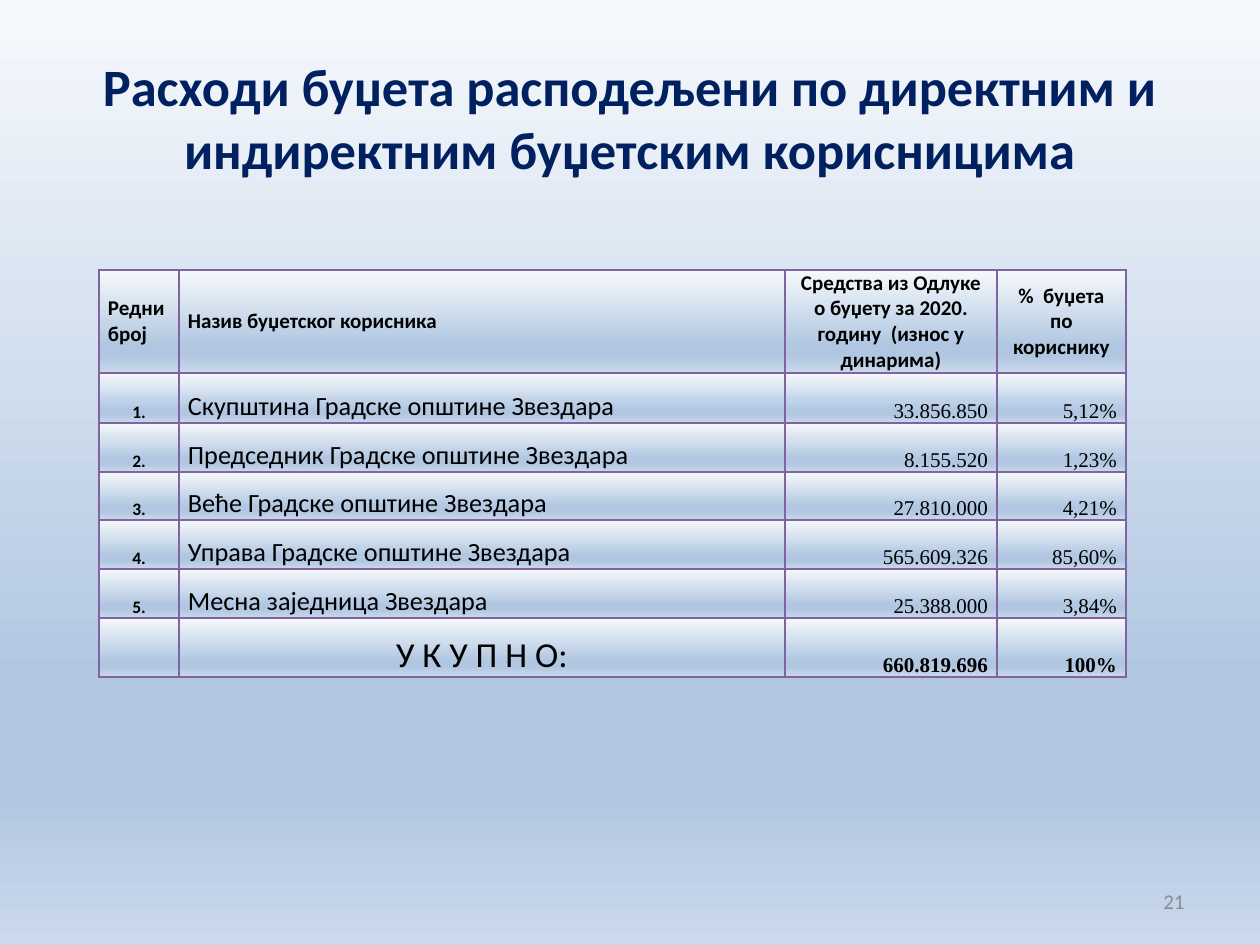
from dataclasses import dataclass

from lxml import etree
from pptx import Presentation
from pptx import util as u
from pptx.dml.color import RGBColor
from pptx.enum import text
from pptx.oxml import ns

PX = 914400 / 126  # EMU in one px

NAVY = RGBColor(0x00, 0x20, 0x60)
BLACK = RGBColor(0x00, 0x00, 0x00)
GRAY = RGBColor(0x8C, 0x8C, 0x8C)
PURPLE = RGBColor(0x80, 0x64, 0xA2)
STOPS = [
    (0, RGBColor(0xF6, 0xF9, 0xFC)),
    (74, RGBColor(0xB0, 0xC6, 0xE1)),
    (83, RGBColor(0xB0, 0xC6, 0xE1)),
    (100, RGBColor(0xCA, 0xD9, 0xEB)),
]

LEFT, CENTER, RIGHT = text.PP_ALIGN.LEFT, text.PP_ALIGN.CENTER, text.PP_ALIGN.RIGHT
MIDDLE, BOTTOM = text.MSO_ANCHOR.MIDDLE, text.MSO_ANCHOR.BOTTOM


@dataclass(frozen=True)
class Style:
    size: int
    color: RGBColor = BLACK
    bold: bool = False
    align: text.PP_ALIGN = LEFT
    anchor: text.MSO_ANCHOR = BOTTOM
    font: str = "Calibri"


TITLE = Style(30, NAVY, True, CENTER, MIDDLE)
PAGE = Style(12, GRAY, False, RIGHT, MIDDLE)
HEAD = Style(12, bold=True, anchor=MIDDLE)
HEAD_MID = Style(12, bold=True, align=CENTER, anchor=MIDDLE)
NUMBER = Style(10, bold=True, align=CENTER)
NAME = Style(15)
VALUE = Style(12, align=RIGHT, font="Times New Roman")
TOTAL = Style(20, align=CENTER)
TOTAL_VALUE = Style(12, bold=True, align=RIGHT, font="Times New Roman")

HEAD_STYLES = (HEAD, HEAD, HEAD_MID, HEAD_MID)
BODY_STYLES = (NUMBER, NAME, VALUE, VALUE)
TOTAL_STYLES = (NUMBER, TOTAL, TOTAL_VALUE, TOTAL_VALUE)

COLUMNS = (80, 606, 212, 129)
ROWS = (
    (103, HEAD_STYLES, ("Редни\vброј", "Назив буџетског корисника",
                        "Средства из Одлуке о буџету за 2020. годину  (износ у динарима)",
                        "%  буџета по кориснику")),
    (50, BODY_STYLES, ("1.", "Скупштина Градске општине Звездара", "33.856.850", "5,12%")),
    (49, BODY_STYLES, ("2.", "Председник Градске општине Звездара", "8.155.520", "1,23%")),
    (48, BODY_STYLES, ("3.", "Веће Градске општине Звездара", "27.810.000", "4,21%")),
    (49, BODY_STYLES, ("4.", "Управа Градске општине Звездара", "565.609.326", "85,60%")),
    (49, BODY_STYLES, ("5.", "Месна заједница Звездара", "25.388.000", "3,84%")),
    (59, TOTAL_STYLES, ("", "У К У П Н О:", "660.819.696", "100%")),
)


def px(n: int) -> u.Emu:
    return u.Emu(round(n * PX))


def set_gradient(fill, parent) -> None:
    """Fill with the vertical four-stop gradient; parent is the XML holding the fill."""
    fill.gradient()
    fill.gradient_angle = 270  # counter-clockwise: runs from top to bottom
    stops = next(parent.iter(ns.qn("a:gsLst")))
    for stop in list(stops):
        stops.remove(stop)
    for percent, color in STOPS:
        gs = etree.SubElement(stops, ns.qn("a:gs"), pos=str(percent * 1000))
        etree.SubElement(gs, ns.qn("a:srgbClr"), val=str(color))


def set_borders(tc_pr) -> None:
    for i, side in enumerate(("lnL", "lnR", "lnT", "lnB")):
        ln = etree.Element(ns.qn(f"a:{side}"), w=str(u.Pt(1)))
        solid = etree.SubElement(ln, ns.qn("a:solidFill"))
        etree.SubElement(solid, ns.qn("a:srgbClr"), val=str(PURPLE))
        tc_pr.insert(i, ln)


def write(tf, words: str, style: Style) -> None:
    tf.text = words
    p = tf.paragraphs[0]
    p.alignment = style.align
    for r in p.runs:
        r.font.name = style.font
        r.font.size = u.Pt(style.size)
        r.font.bold = style.bold
        r.font.color.rgb = style.color


def add_label(slide, box: tuple[int, int, int, int], words: str, style: Style) -> None:
    tf = slide.shapes.add_textbox(*map(px, box)).text_frame
    tf.word_wrap = True
    tf.vertical_anchor = style.anchor
    write(tf, words, style)


def format_cell(cell, words: str, style: Style) -> None:
    cell.margin_left = cell.margin_right = px(9)
    cell.margin_top = cell.margin_bottom = 0
    cell.vertical_anchor = style.anchor
    write(cell.text_frame, words, style)
    tc_pr = cell._tc.get_or_add_tcPr()
    set_gradient(cell.fill, tc_pr)
    set_borders(tc_pr)


def add_budget_table(slide, left: int, top: int) -> None:
    height = sum(row[0] for row in ROWS)
    table = slide.shapes.add_table(len(ROWS), len(COLUMNS), px(left), px(top),
                                   px(sum(COLUMNS)), px(height)).table
    table.first_row = table.horz_banding = False
    for column, width in zip(table.columns, COLUMNS):
        column.width = px(width)
    for row, (row_height, styles, words) in zip(table.rows, ROWS):
        row.height = px(row_height)
        for cell, cell_words, style in zip(row.cells, words, styles):
            format_cell(cell, cell_words, style)


def main() -> None:
    prs = Presentation()
    prs.slide_width, prs.slide_height = px(1260), px(945)
    slide = prs.slides.add_slide(prs.slide_layouts[6])

    # Background
    set_gradient(slide.background.fill, slide.element)

    # Title, table and page number
    add_label(slide, (63, 38, 1134, 158),
              "Расходи буџета расподељени по директним и индиректним буџетским корисницима",
              TITLE)
    add_budget_table(slide, 99, 270)
    add_label(slide, (903, 876, 294, 50), "21", PAGE)

    prs.save("out.pptx")


if __name__ == "__main__":
    main()
